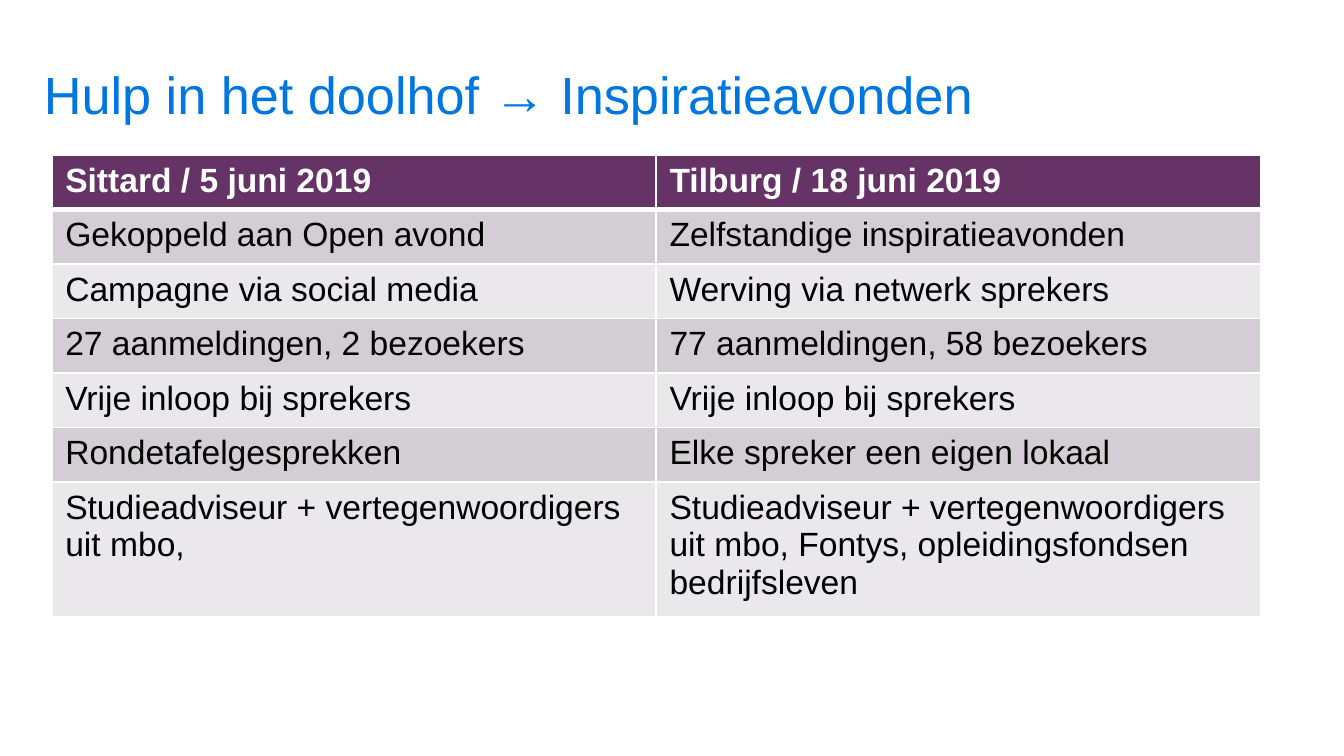
"""Build the slide comparing two information evenings."""
import dataclasses
import typing

import lxml.etree
import pptx
import pptx.dml.color
import pptx.enum.text
import pptx.oxml.ns
import pptx.util

Cm = pptx.util.Cm
Pt = pptx.util.Pt


@dataclasses.dataclass(frozen=True)
class Theme:
    font: str = "Arial"
    title_size: int = 28
    body_size: int = 18
    title: str = "0076E0"
    header: str = "653366"
    header_text: str = "FFFFFF"
    body_text: str = "000000"
    bands: tuple[str, str] = ("D3CED3", "EAE8EA")
    border: str = "FFFFFF"
    thin_border: int = 1
    thick_border: int = 3


class Row(typing.NamedTuple):
    sittard: str
    tilburg: str
    height: float = 1.03


THEME = Theme()
TITLE = "Hulp in het doolhof → Inspiratieavonden"
ROWS = [
    Row("Sittard / 5 juni 2019", "Tilburg / 18 juni 2019"),
    Row("Gekoppeld aan Open avond", "Zelfstandige inspiratieavonden"),
    Row("Campagne via social media", "Werving via netwerk sprekers"),
    Row("27 aanmeldingen, 2 bezoekers", "77 aanmeldingen, 58 bezoekers"),
    Row("Vrije inloop bij sprekers", "Vrije inloop bij sprekers"),
    Row("Rondetafelgesprekken", "Elke spreker een eigen lokaal"),
    Row(
        "Studieadviseur + vertegenwoordigers uit mbo,",
        "Studieadviseur + vertegenwoordigers uit mbo, Fontys, "
        "opleidingsfondsen bedrijfsleven",
        2.38,
    ),
]


def set_text(text_frame, text: str, size: int, color: str, bold: bool = False) -> None:
    text_frame.text = text
    for paragraph in text_frame.paragraphs:
        for run in paragraph.runs:
            run.font.name = THEME.font
            run.font.size = Pt(size)
            run.font.bold = bold
            run.font.color.rgb = pptx.dml.color.RGBColor.from_string(color)


def set_borders(cell, top: int, bottom: int) -> None:
    properties = cell._tc.get_or_add_tcPr()
    widths = {"lnL": THEME.thin_border, "lnR": THEME.thin_border, "lnT": top, "lnB": bottom}
    for position, (side, width) in enumerate(widths.items()):
        line = lxml.etree.Element(pptx.oxml.ns.qn(f"a:{side}"), w=str(Pt(width)))
        fill = lxml.etree.SubElement(line, pptx.oxml.ns.qn("a:solidFill"))
        lxml.etree.SubElement(fill, pptx.oxml.ns.qn("a:srgbClr"), val=THEME.border)
        properties.insert(position, line)


def add_title(slide) -> None:
    title = slide.shapes.add_textbox(Cm(0.58), Cm(0.58), Cm(24.23), Cm(2.39))
    title.text_frame.word_wrap = True
    title.text_frame.vertical_anchor = pptx.enum.text.MSO_ANCHOR.MIDDLE
    set_text(title.text_frame, TITLE, THEME.title_size, THEME.title)


def fill_cell(cell, text: str, row_index: int) -> None:
    is_header = row_index == 0
    fill_color = THEME.header if is_header else THEME.bands[(row_index - 1) % 2]
    text_color = THEME.header_text if is_header else THEME.body_text
    set_text(cell.text_frame, text, THEME.body_size, text_color, bold=is_header)
    cell.fill.solid()
    cell.fill.fore_color.rgb = pptx.dml.color.RGBColor.from_string(fill_color)
    set_borders(
        cell,
        top=THEME.thick_border if row_index == 1 else THEME.thin_border,
        bottom=THEME.thick_border if is_header else THEME.thin_border,
    )


def add_comparison_table(slide, rows: list[Row]) -> None:
    height = sum(row.height for row in rows)
    frame = slide.shapes.add_table(len(rows), 2, Cm(0.98), Cm(2.93), Cm(22.84), Cm(height))
    table = frame.table
    for row_index, row in enumerate(rows):
        table.rows[row_index].height = Cm(row.height)
        for column_index, text in enumerate((row.sittard, row.tilburg)):
            fill_cell(table.cell(row_index, column_index), text, row_index)


def main() -> None:
    presentation = pptx.Presentation()
    presentation.slide_width = Cm(25.4)
    presentation.slide_height = Cm(14.29)
    slide = presentation.slides.add_slide(presentation.slide_layouts[6])
    add_title(slide)
    add_comparison_table(slide, ROWS)
    presentation.save("out.pptx")


if __name__ == "__main__":
    main()
